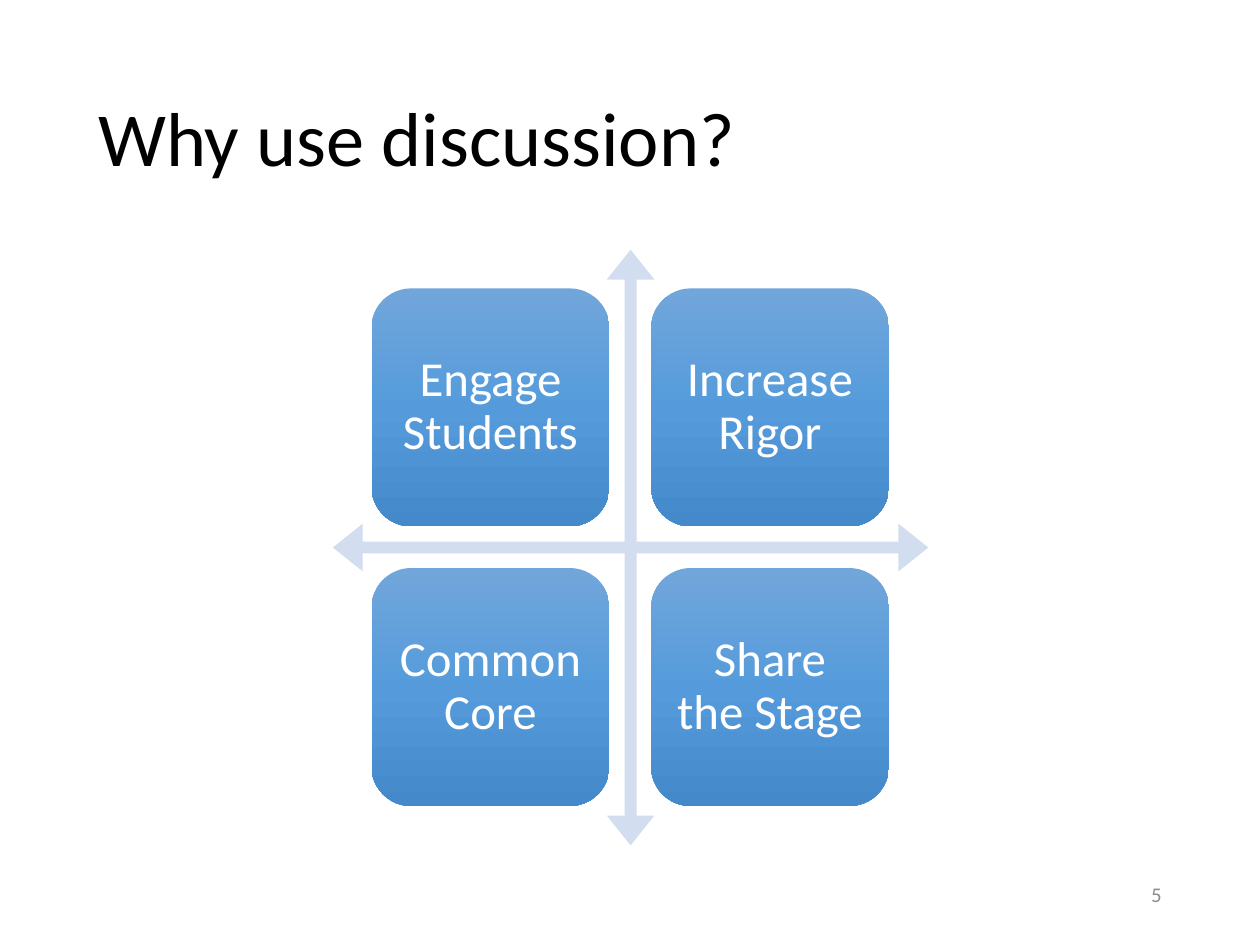
from itertools import product

from lxml.etree import SubElement
from pptx import Presentation
from pptx.dml.color import RGBColor
from pptx.enum.shapes import MSO_SHAPE
from pptx.enum.text import MSO_ANCHOR, PP_ALIGN
from pptx.oxml.ns import qn
from pptx.util import Inches, Pt

COLORS = {
    "title": "000000",
    "number": "8C8C8C",
    "arrow": "D2DEEF",
    "label": "FFFFFF",
    "top": "71A6DB",
    "middle": "559BDB",
    "bottom": "448ACA",
}


class SlideBuilder:
    """Draws styled elements on a slide, measured in grid cells of a tenth of an inch."""

    font = "Calibri"
    cell = Inches(0.1)

    def __init__(self, slide):
        self.slide = slide

    def place(self, *lengths):
        return [round(length * self.cell) for length in lengths]

    def style_text(self, shape, text, size, color, alignment, spacing=1.0):
        frame = shape.text_frame
        frame.text = text
        frame.word_wrap = True
        frame.vertical_anchor = MSO_ANCHOR.MIDDLE
        paragraph = frame.paragraphs[0]
        paragraph.alignment = alignment
        paragraph.line_spacing = spacing
        font = paragraph.runs[0].font
        font.name = self.font
        font.size = Pt(size)
        font.color.rgb = RGBColor.from_string(COLORS[color])

    def add_text(self, box, *style):
        self.style_text(self.slide.shapes.add_textbox(*self.place(*box)), *style)

    def add_preset(self, preset, box):
        shape = self.slide.shapes.add_shape(preset, *self.place(*box))
        shape.shadow.inherit = False
        shape.line.fill.background()
        return shape

    def add_arrows(self, box):
        arrows = self.add_preset(MSO_SHAPE.QUAD_ARROW, box)
        for index, share in enumerate((0.02, 0.04, 0.05)):
            arrows.adjustments[index] = share
        arrows.fill.solid()
        arrows.fill.fore_color.rgb = RGBColor.from_string(COLORS["arrow"])

    def add_card(self, box, text):
        card = self.add_preset(MSO_SHAPE.ROUNDED_RECTANGLE, box)
        card.fill.gradient()
        card.fill.gradient_angle = 270
        stops = card._element.spPr.find(f".//{qn('a:gsLst')}")
        for stop in list(stops):
            stops.remove(stop)
        for position, name in enumerate(("top", "middle", "bottom")):
            stop = SubElement(stops, qn("a:gs"), pos=str(position * 50000))
            SubElement(stop, qn("a:srgbClr"), val=COLORS[name])
        frame = card.text_frame
        frame.margin_left = frame.margin_right = Inches(0.12)
        frame.margin_top = frame.margin_bottom = Inches(0.12)
        self.style_text(card, text, 30, "label", PP_ALIGN.CENTER, 0.9)


def main():
    presentation = Presentation()
    presentation.slide_width = Inches(10.75)
    presentation.slide_height = Inches(8)
    builder = SlideBuilder(presentation.slides.add_slide(presentation.slide_layouts[6]))

    builder.add_text((7.4, 4.3, 92.7, 15.5), "Why use discussion?", 46.9, "title", PP_ALIGN.LEFT, 0.9)
    builder.add_arrows((28.4, 21.3, 50.8, 50.8))

    labels = ("Engage Students", "Increase Rigor", "Common Core", "Share the Stage")
    side, step = 20.3, 23.85
    for label, (row, column) in zip(labels, product(range(2), repeat=2)):
        builder.add_card((31.7 + column * step, 24.6 + row * step, side, side), label)

    builder.add_text((75.9, 74.1, 24.2, 4.3), "5", 12.8, "number", PP_ALIGN.RIGHT)
    presentation.save("out.pptx")


if __name__ == "__main__":
    main()
